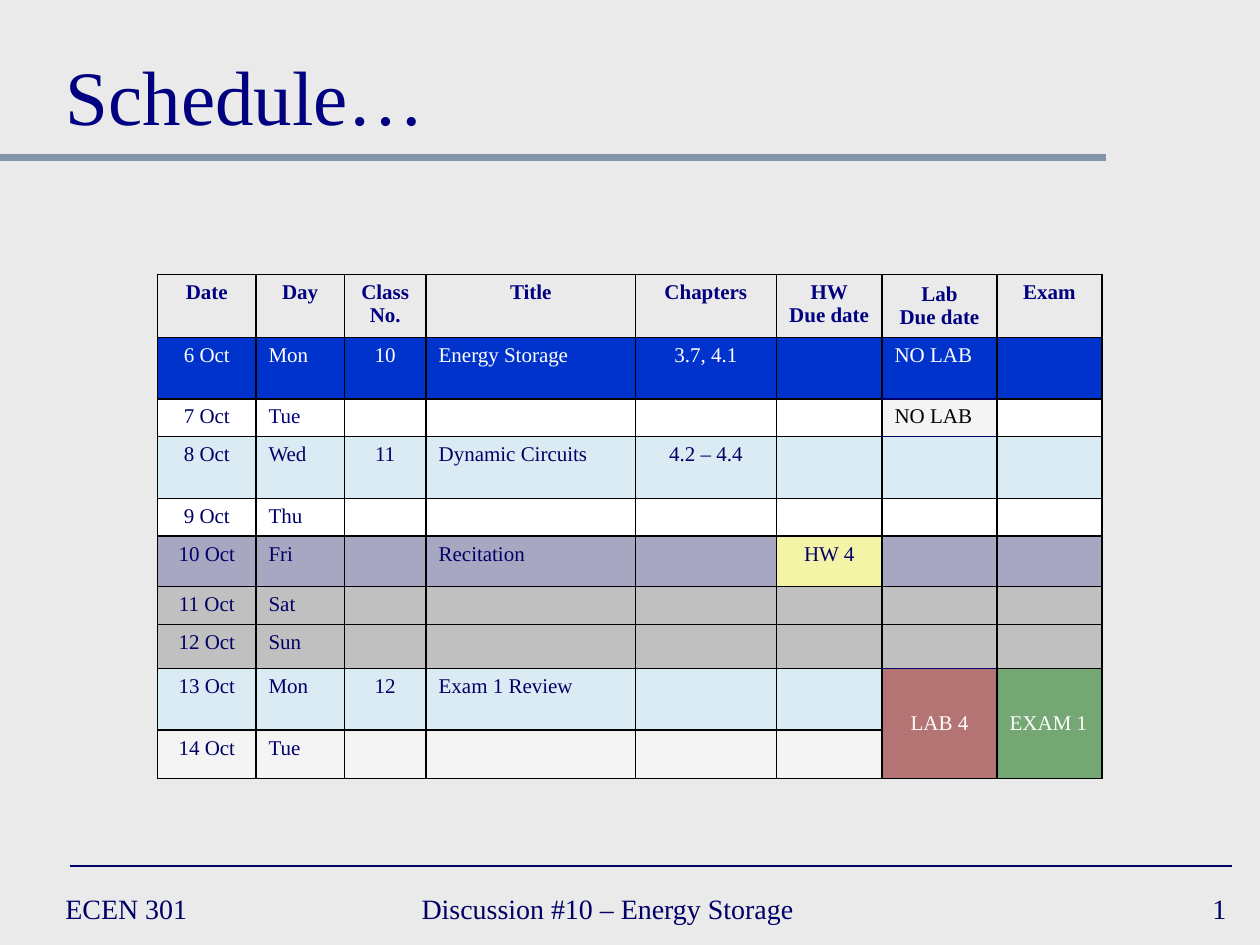
"""Build the class schedule slide."""
from lxml.etree import SubElement as Sub
from pptx import Presentation
from pptx.dml.color import RGBColor as Rgb
from pptx.enum.shapes import MSO_CONNECTOR as Link
from pptx.enum.text import MSO_ANCHOR as Anchor, MSO_AUTO_SIZE as Auto, PP_ALIGN as Align
from pptx.oxml.ns import qn
from pptx.util import Cm, Pt

HUES = {
    "page": "EAEAEA", "rule": "8495A9", "navy": "000066", "head": "000080",
    "blue": "0033CC", "white": "FFFFFF", "black": "000000", "sky": "CCECFF",
    "plum": "666699", "lemon": "FFFF66", "gray": "C0C0C0", "red": "800000",
    "green": "006600",
}
WIDTHS = [1.98, 1.78, 1.65, 4.22, 2.84, 2.13, 2.32, 2.11]
HEADS = ["Date", "Day", "Class\nNo.", "Title", "Chapters",
         "HW\nDue date", "Lab\nDue date", "Exam"]
ROWS = [
    (1.24, None, 0, "head", HEADS),
    (1.24, "blue", 100, "white",
     ["6 Oct", "Mon", "10", "Energy Storage", "3.7, 4.1", "", "NO LAB", ""]),
    (0.64, "white", 100, "navy", ["7 Oct", "Tue", "", "", "", "", "NO LAB", ""]),
    (1.24, "sky", 50, "navy",
     ["8 Oct", "Wed", "11", "Dynamic Circuits", "4.2 – 4.4", "", "", ""]),
    (0.76, "white", 100, "navy", ["9 Oct", "Thu"] + [""] * 6),
    (1.02, "plum", 50, "navy",
     ["10 Oct", "Fri", "", "Recitation", "", "HW 4", "", ""]),
    (0.76, "gray", 100, "navy", ["11 Oct", "Sat"] + [""] * 6),
    (0.89, "gray", 100, "navy", ["12 Oct", "Sun"] + [""] * 6),
    (1.24, "sky", 50, "navy",
     ["13 Oct", "Mon", "12", "Exam 1 Review", "", "", "LAB 4", "EXAM 1"]),
    (0.97, "white", 50, "navy", ["14 Oct", "Tue"] + [""] * 6),
]
SPECIAL = {
    (2, 1): ("white", 100, "head"),
    (2, 6): ("white", 50, "black"),
    (5, 5): ("lemon", 50, "navy"),
    (8, 6): ("red", 50, "white"),
    (8, 7): ("green", 50, "white"),
}
LAB = 6
MIDDLE = {(0, LAB), (8, LAB), (8, 7)}
CENTERED = {0, 2, 4, 5}
NAVY_EDGES = {1, 2, 7}


class Deck:
    """Hold the style and the current slide."""

    font = "Times New Roman"

    def __init__(self):
        self.show = Presentation()
        self.show.slide_width, self.show.slide_height = Cm(25.4), Cm(19.05)
        self.slide = self.show.slides.add_slide(self.show.slide_layouts[5])
        self.paint(self.slide.background.fill, "page")

    def paint(self, fill, hue):
        fill.solid()
        fill.fore_color.rgb = Rgb.from_string(HUES[hue])

    def words(self, frame, text, size, hue, align=Align.LEFT, bold=False):
        for i, line in enumerate(text.split("\n")):
            para = frame.add_paragraph() if i else frame.paragraphs[0]
            para.alignment = align
            para.font.size = Pt(size)
            if line:
                run = para.add_run()
                run.text = line
                run.font.name, run.font.size, run.font.bold = self.font, Pt(size), bold
                run.font.color.rgb = Rgb.from_string(HUES[hue])

    def title(self, text, box):
        shape = self.slide.shapes.title
        shape.left, shape.top, shape.width, shape.height = map(Cm, box)
        frame = shape.text_frame
        frame.auto_size, frame.vertical_anchor = Auto.NONE, Anchor.BOTTOM
        self.words(frame, text, 44, "head")

    def label(self, text, left, width, align=Align.LEFT):
        box = self.slide.shapes.add_textbox(Cm(left), Cm(17.78), Cm(width), Cm(1.07))
        frame = box.text_frame
        frame.word_wrap, frame.vertical_anchor = True, Anchor.MIDDLE
        self.words(frame, text, 16, "navy", align)

    def rule(self, left, right, top, hue, width):
        line = self.slide.shapes.add_connector(
            Link.STRAIGHT, Cm(left), Cm(top), Cm(right), Cm(top))
        line.line.color.rgb = Rgb.from_string(HUES[hue])
        line.line.width = Pt(width)
        Sub(line._element.spPr, qn("a:effectLst"))

    def edge(self, cell, side, hue):
        props = cell._tc.get_or_add_tcPr()
        line = Sub(props, qn("a:ln" + side), w=str(Pt(1)))
        Sub(Sub(line, qn("a:solidFill")), qn("a:srgbClr"), val=HUES[hue])

    def shade(self, cell, hue, alpha):
        if hue is None:
            cell.fill.background()
            return
        self.paint(cell.fill, hue)
        if alpha < 100:
            tint = cell._tc.tcPr.find(qn("a:solidFill")).find(qn("a:srgbClr"))
            Sub(tint, qn("a:alpha"), val=str(alpha * 1000))

    def cell(self, cell, row, col, text, style):
        navy = {"T": row - 1, "B": row}
        for side in "LRTB":
            blue = col == LAB and navy.get(side) in NAVY_EDGES
            self.edge(cell, side, "navy" if blue else "black")
        hue, alpha, ink = SPECIAL.get((row, col), style)
        self.shade(cell, hue, alpha)
        mid = (row, col) in MIDDLE
        cell.vertical_anchor = Anchor.MIDDLE if mid else Anchor.TOP
        center = row == 0 or col in CENTERED or (mid and col == LAB)
        align = Align.CENTER if center else Align.LEFT
        self.words(cell.text_frame, text, 12, ink, align, row == 0)

    def table(self, left, top):
        tall = sum(row[0] for row in ROWS)
        grid = self.slide.shapes.add_table(
            len(ROWS), len(WIDTHS), Cm(left), Cm(top), Cm(sum(WIDTHS)), Cm(tall)).table
        grid.first_row = grid.horz_banding = False
        for col, width in zip(grid.columns, WIDTHS):
            col.width = Cm(width)
        for r, (height, hue, alpha, ink, texts) in enumerate(ROWS):
            grid.rows[r].height = Cm(height)
            for c, text in enumerate(texts):
                self.cell(grid.cell(r, c), r, c, text, (hue, alpha, ink))
        for c in (LAB, 7):
            grid.cell(8, c).merge(grid.cell(9, c))


def main():
    deck = Deck()
    deck.rule(0, 22.3, 3.17, "rule", 4)
    deck.rule(1.42, 24.84, 17.46, "navy", 1)
    deck.label("ECEN 301", 1.07, 5.5)
    deck.label("Discussion #10 – Energy Storage", 8.25, 9.73)
    deck.label("1", 19.69, 5.28, Align.RIGHT)
    deck.table(3.18, 5.53)
    deck.title("Schedule…", (1.07, 0.43, 23.5, 2.54))
    deck.show.save("out.pptx")


if __name__ == "__main__":
    main()
